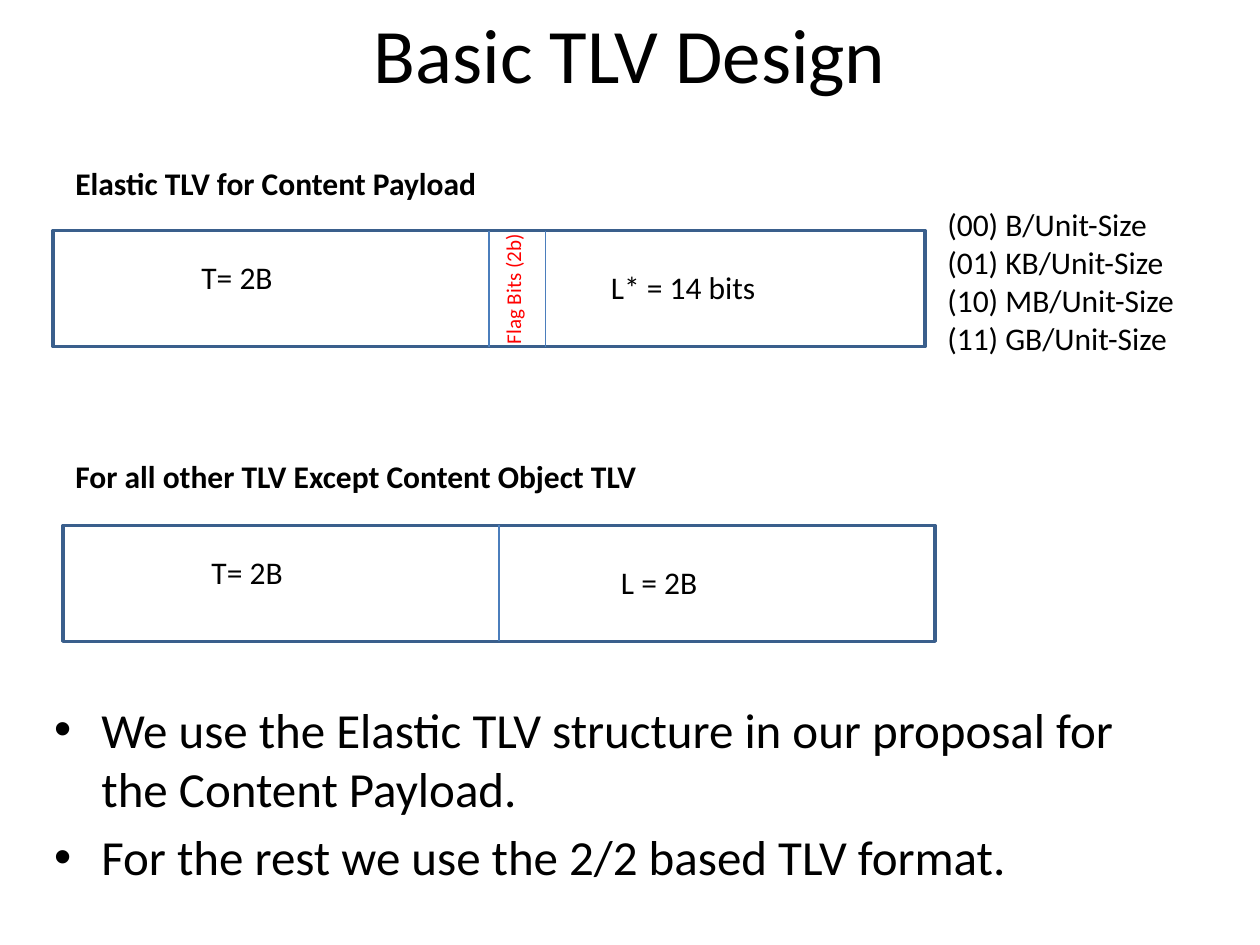
import pptx
import pptx.dml.color
import pptx.enum.shapes
import pptx.enum.text
import pptx.oxml.ns
import pptx.util
from lxml import etree
from pptx.util import Inches

FONT = "Calibri"
BLACK, RED = "000000", "FF0000"
BORDER, DIVIDER = "3A5F8C", "4B7EBC"
FIELD_W, FIELD_H = 6.92, 0.92


def color(hex_value):
    return pptx.dml.color.RGBColor.from_string(hex_value)


def format_text(frame, size, hex_value=BLACK, bold=False):
    frame.word_wrap = True
    for paragraph in frame.paragraphs:
        for run in paragraph.runs:
            run.font.name = FONT
            run.font.size = pptx.util.Pt(size)
            run.font.bold = bold
            run.font.color.rgb = color(hex_value)


def add_label(slide, text, left, top, width, height, size=18, **style):
    label = slide.shapes.add_textbox(
        Inches(left), Inches(top), Inches(width), Inches(height))
    label.text_frame.text = text
    format_text(label.text_frame, size, **style)
    return label


def add_divider(slide, x, top):
    divider = slide.shapes.add_connector(
        pptx.enum.shapes.MSO_CONNECTOR.STRAIGHT,
        Inches(x), Inches(top), Inches(x), Inches(top + FIELD_H))
    divider.line.color.rgb = color(DIVIDER)
    divider.line.width = pptx.util.Pt(0.75)
    properties = divider._element.spPr
    etree.SubElement(properties, pptx.oxml.ns.qn("a:effectLst"))


def add_tlv(slide, left, top, length_text, length_drop, dividers):
    """Draw a TLV frame; dividers are offsets from its left edge."""
    frame = slide.shapes.add_shape(
        pptx.enum.shapes.MSO_SHAPE.RECTANGLE,
        Inches(left), Inches(top), Inches(FIELD_W), Inches(FIELD_H))
    frame.shadow.inherit = False
    frame.fill.background()
    frame.line.color.rgb = color(BORDER)
    frame.line.width = pptx.util.Pt(2)
    for offset in dividers:
        add_divider(slide, left + offset, top)
    add_label(slide, "T= 2B", left + 1.08, top + 0.17, 1.58, 0.42)
    add_label(slide, length_text, left + 4.33, top + length_drop, 1.58, 0.42)


def add_elastic_tlv(slide, left, top):
    add_label(slide, "Elastic TLV for Content Payload",
              left + 0.08, top - 0.58, 4.58, 0.4, bold=True)
    add_tlv(slide, left, top, "L* = 14 bits", 0.25, (3.46, 3.91))
    # Flag field between the two dividers
    flag = add_label(slide, "Flag Bits (2b)", left + 3.09, top + 0.29,
                     1.12, 0.3, size=12, hex_value=RED)
    flag.rotation = 270
    # Meaning of the flag values
    units = ("(00) B", "(01) KB", "(10) MB", "(11) GB")
    add_label(slide, "\n".join(f"{unit}/Unit-Size" for unit in units),
              left + 7, top - 0.25, 2.08, 1.31)


def add_plain_tlv(slide, left, top):
    add_label(slide, "For all other TLV Except Content Object TLV",
              left, top - 0.59, 5.25, 0.4, bold=True)
    add_tlv(slide, left, top, "L = 2B", 0.25, (FIELD_W / 2,))


def fill_placeholder(placeholder, text, left, top, width, height, size):
    placeholder.left, placeholder.top = Inches(left), Inches(top)
    placeholder.width, placeholder.height = Inches(width), Inches(height)
    placeholder.text_frame.text = text
    format_text(placeholder.text_frame, size)


def main():
    deck = pptx.Presentation()
    deck.slide_width, deck.slide_height = Inches(10), Inches(7.5)
    # Title and content layout: the bullets use its body placeholder
    slide = deck.slides.add_slide(deck.slide_layouts[1])

    # Title
    title = slide.shapes.title
    fill_placeholder(title, "Basic TLV Design", 0.5, 0, 9, 0.83, 44)
    title.text_frame.vertical_anchor = pptx.enum.text.MSO_ANCHOR.MIDDLE

    # TLV diagrams
    add_elastic_tlv(slide, 0.42, 1.83)
    add_plain_tlv(slide, 0.5, 4.17)

    # Conclusions
    conclusions = (
        "We use the Elastic TLV structure in our proposal for the Content Payload.",
        "For the rest we use the 2/2 based TLV format.",
    )
    fill_placeholder(slide.placeholders[1], "\n".join(conclusions),
                     0.33, 5.5, 9, 1.75, 28)

    deck.save("out.pptx")


if __name__ == "__main__":
    main()
